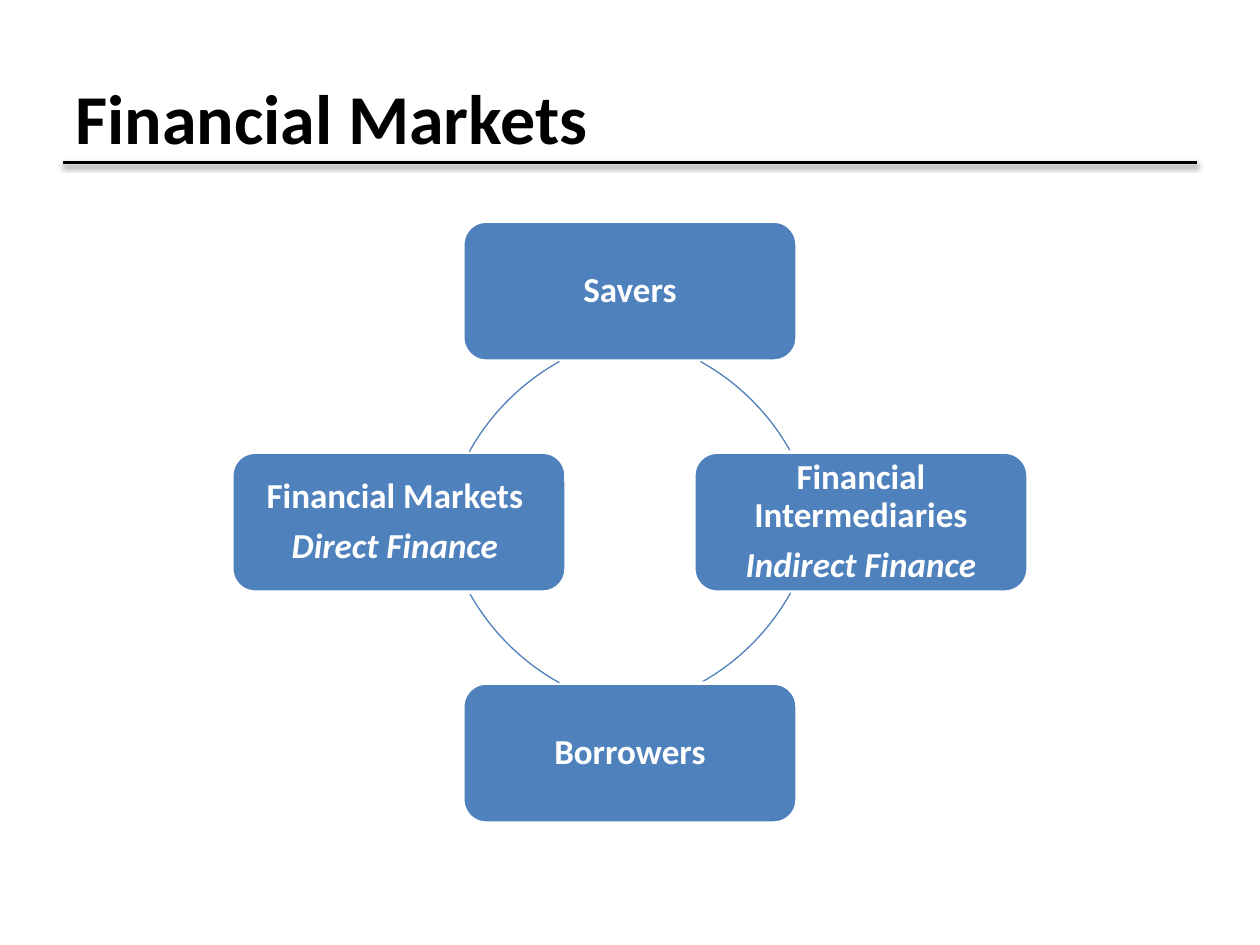
import math
from dataclasses import dataclass

import pptx
import pptx.dml.color
import pptx.enum.shapes
import pptx.enum.text
import pptx.oxml
import pptx.oxml.ns
import pptx.util

Pt = pptx.util.Pt
RGBColor = pptx.dml.color.RGBColor
SHAPES = pptx.enum.shapes.MSO_SHAPE
ALIGN = pptx.enum.text.PP_ALIGN


@dataclass(frozen=True)
class Theme:
    font: str = "Calibri"
    black: RGBColor = RGBColor(0x00, 0x00, 0x00)
    white: RGBColor = RGBColor(0xFF, 0xFF, 0xFF)
    blue: RGBColor = RGBColor(0x4F, 0x81, 0xBD)
    title_size: int = 40
    node_size: int = 20


THEME = Theme()

# Cycle geometry, in points
CENTER_X, CENTER_Y = 360, 298.4
RADIUS = 132
NODE_WIDTH, NODE_HEIGHT = 191, 80
ARC_SHIFT = 33.5  # each arc's circle lies this far beyond the cycle centre
ARC_HALF_SWEEP = 16

# Clockwise from the top
NODES = [
    ["Savers"],
    ["Financial Intermediaries", "Indirect Finance"],
    ["Borrowers"],
    ["Financial Markets ", "Direct Finance "],
]


def apply_format(target, values):
    for name, value in values.items():
        setattr(target, name, value)


def format_font(font, size, color, italic=False):
    apply_format(font, {"name": THEME.font, "size": Pt(size), "bold": True, "italic": italic})
    font.color.rgb = color


def set_line(shape, color, width):
    shape.line.color.rgb = color
    shape.line.width = Pt(width)


def polar(angle, distance):
    radians = math.radians(angle)
    return CENTER_X + distance * math.cos(radians), CENTER_Y + distance * math.sin(radians)


def add_title(slide, text):
    title = slide.shapes.title
    apply_format(title, {"left": Pt(36), "top": Pt(21.6), "width": Pt(648), "height": Pt(90)})
    title.text_frame.text = text
    apply_format(title.text_frame, {
        "auto_size": pptx.enum.text.MSO_AUTO_SIZE.NONE,
        "vertical_anchor": pptx.enum.text.MSO_ANCHOR.MIDDLE,
    })
    paragraph = title.text_frame.paragraphs[0]
    paragraph.alignment = ALIGN.LEFT
    format_font(paragraph.font, THEME.title_size, THEME.black)


def add_title_rule(slide):
    rule = slide.shapes.add_connector(
        pptx.enum.shapes.MSO_CONNECTOR.STRAIGHT, Pt(36), Pt(92.9), Pt(684), Pt(92.9))
    set_line(rule, THEME.black, 2)
    # Soft shadow falling straight down
    rule._element.spPr.append(pptx.oxml.parse_xml(
        f'<a:effectLst {pptx.oxml.ns.nsdecls("a")}>'
        f'<a:outerShdw blurRad="{Pt(3.1)}" dist="{Pt(1.6)}" dir="5400000" rotWithShape="0">'
        f'<a:srgbClr val="{THEME.black}"><a:alpha val="38000"/></a:srgbClr>'
        '</a:outerShdw></a:effectLst>'))


def add_node(slide, angle, lines):
    x, y = polar(angle, RADIUS)
    node = slide.shapes.add_shape(
        SHAPES.ROUNDED_RECTANGLE, Pt(x - NODE_WIDTH / 2), Pt(y - NODE_HEIGHT / 2),
        Pt(NODE_WIDTH), Pt(NODE_HEIGHT))
    node.shadow.inherit = False
    node.fill.solid()
    node.fill.fore_color.rgb = THEME.blue
    set_line(node, THEME.white, 2)

    frame = node.text_frame
    frame.text = "\n".join(lines)
    apply_format(frame, {
        "word_wrap": True,
        "vertical_anchor": pptx.enum.text.MSO_ANCHOR.MIDDLE,
        "margin_left": Pt(6), "margin_right": Pt(6),
        "margin_top": Pt(6), "margin_bottom": Pt(6),
    })
    for index, paragraph in enumerate(frame.paragraphs):
        apply_format(paragraph, {
            "alignment": ALIGN.CENTER, "line_spacing": 0.9, "space_after": Pt(7)})
        format_font(paragraph.font, THEME.node_size, THEME.white, italic=index > 0)


def add_arc(slide, angle):
    x, y = polar(angle, -ARC_SHIFT)
    arc = slide.shapes.add_shape(
        SHAPES.ARC, Pt(x - RADIUS), Pt(y - RADIUS), Pt(2 * RADIUS), Pt(2 * RADIUS))
    arc.shadow.inherit = False
    arc.fill.background()
    set_line(arc, THEME.blue, 0.75)
    # Adjustments hold 60000ths of a degree divided by 100000
    arc.adjustments[0] = (angle - ARC_HALF_SWEEP) * 0.6
    arc.adjustments[1] = (angle + ARC_HALF_SWEEP) * 0.6


def main():
    presentation = pptx.Presentation()
    apply_format(presentation, {"slide_width": Pt(720), "slide_height": Pt(540)})
    slide = presentation.slides.add_slide(presentation.slide_layouts[5])

    # Heading
    add_title(slide, "Financial Markets")
    add_title_rule(slide)

    # Cycle: each node is followed by the arc to the next one
    for index, lines in enumerate(NODES):
        angle = (270 + 90 * index) % 360
        add_node(slide, angle, lines)
        add_arc(slide, angle + 45)

    presentation.save("out.pptx")


if __name__ == "__main__":
    main()
